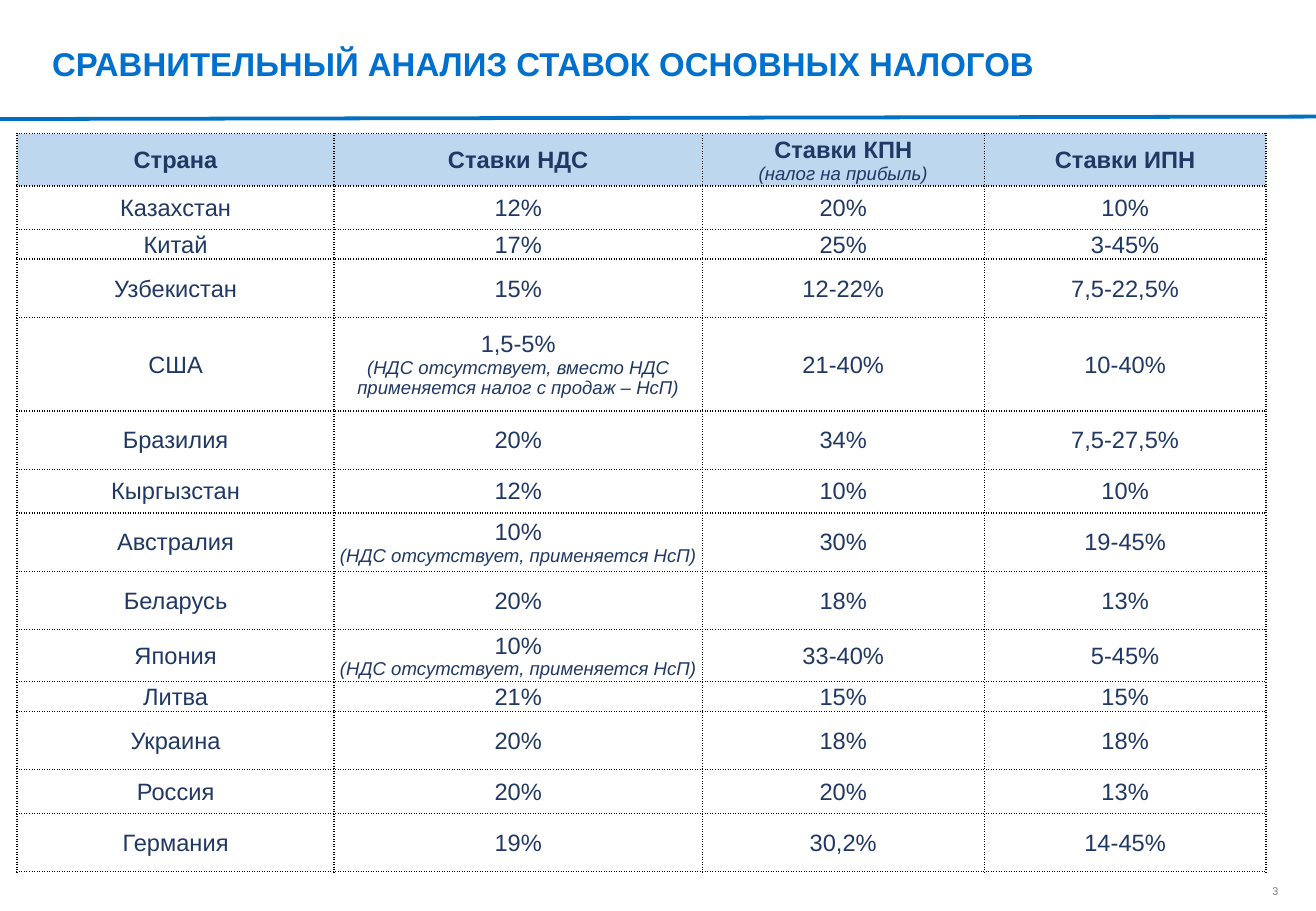
from lxml.etree import SubElement
from pptx import Presentation
from pptx.dml.color import RGBColor
from pptx.enum.shapes import MSO_CONNECTOR
from pptx.enum.text import MSO_ANCHOR, MSO_AUTO_SIZE, PP_ALIGN
from pptx.oxml.ns import qn
from pptx.util import Inches, Pt

COLORS = {"title": "0070CE", "rule": "0070C0", "text": "203864", "header": "BDD7EE",
          "body": "FFFFFF", "border": "000000", "number": "808080"}
WIDTH, HEIGHT = 10.83, 7.5
COLUMNS = [2.61, 3.03, 2.32, 2.32]
TIGHT, SMALL, NOTED, MEDIUM, LARGE = 0.24, 0.36, 0.43, 0.48, 0.77
NO_VAT = "(НДС отсутствует, применяется НсП)"
US_NOTE = "(НДС отсутствует, вместо НДС применяется налог с продаж – НсП)"
ROWS = [
    (NOTED, "Страна", "Ставки НДС", "Ставки КПН\n(налог на прибыль)", "Ставки ИПН"),
    (SMALL, "Казахстан", "12%", "20%", "10%"),
    (TIGHT, "Китай", "17%", "25%", "3-45%"),
    (MEDIUM, "Узбекистан", "15%", "12-22%", "7,5-22,5%"),
    (LARGE, "США", f"1,5-5%\n{US_NOTE}", "21-40%", "10-40%"),
    (MEDIUM, "Бразилия", "20%", "34%", "7,5-27,5%"),
    (SMALL, "Кыргызстан", "12%", "10%", "10%"),
    (MEDIUM, "Австралия", f"10%\n{NO_VAT}", "30%", "19-45%"),
    (MEDIUM, "Беларусь", "20%", "18%", "13%"),
    (NOTED, "Япония", f"10%\n{NO_VAT}", "33-40%", "5-45%"),
    (TIGHT, "Литва", "21%", "15%", "15%"),
    (MEDIUM, "Украина", "20%", "18%", "18%"),
    (SMALL, "Россия", "20%", "20%", "13%"),
    (MEDIUM, "Германия", "19%", "30,2%", "14-45%"),
]


def rgb(name):
    """Return a named colour."""
    return RGBColor.from_string(COLORS[name])


def set_font(p, size, color, name="Arial", bold=False, italic=False):
    """Set the font of a paragraph."""
    f = p.font
    f.name, f.size, f.bold, f.italic = name, Pt(size), bold, italic
    f.color.rgb = rgb(color)


def add_text(s, box, text):
    """Add a middle-anchored text box and return its text frame."""
    tf = s.shapes.add_textbox(*map(Inches, box)).text_frame
    tf.text = text
    tf.vertical_anchor = MSO_ANCHOR.MIDDLE
    return tf


def add_header(s, left, top, width, height):
    """Add the title and the full-width rule below it."""
    tf = add_text(s, (left, top, width, height), "СРАВНИТЕЛЬНЫЙ АНАЛИЗ СТАВОК ОСНОВНЫХ НАЛОГОВ")
    tf.word_wrap = True
    p = tf.paragraphs[0]
    p.line_spacing = 0.9
    set_font(p, 19.5, "title", bold=True)
    rule = s.shapes.add_connector(MSO_CONNECTOR.STRAIGHT, 0, Inches(top + height + 0.24),
                                  Inches(WIDTH), Inches(top + height + 0.22))
    rule.line.color.rgb = rgb("rule")
    rule.line.width = Pt(2.25)
    SubElement(rule._element.spPr, qn("a:effectLst"))


def add_borders(cell):
    """Give a cell dotted borders on all sides."""
    tc_pr = cell._tc.get_or_add_tcPr()
    for side in ("lnL", "lnR", "lnT", "lnB"):
        ln = SubElement(tc_pr, qn(f"a:{side}"), w=str(Pt(1)))
        fill = SubElement(ln, qn("a:solidFill"))
        SubElement(fill, qn("a:srgbClr"), val=COLORS["border"])
        SubElement(ln, qn("a:prstDash"), val="sysDot")


def fill_cell(cell, text, is_header):
    """Write a value and its optional note into a styled cell."""
    add_borders(cell)
    cell.fill.solid()
    cell.fill.fore_color.rgb = rgb("header" if is_header else "body")
    cell.vertical_anchor = MSO_ANCHOR.MIDDLE
    cell.margin_left = cell.margin_right = cell.margin_top = Inches(0.01)
    cell.margin_bottom = 0
    cell.text = text
    for i, p in enumerate(cell.text_frame.paragraphs):
        p.alignment = PP_ALIGN.CENTER
        is_note = i > 0
        set_font(p, 11 if is_note else 14, "text", bold=is_header and not is_note, italic=is_note)


def add_rates(s, left, top):
    """Add the table of tax rates by country."""
    heights = [row[0] for row in ROWS]
    box = (left, top, sum(COLUMNS), sum(heights))
    table = s.shapes.add_table(len(ROWS), len(COLUMNS), *map(Inches, box)).table
    table.first_row = table.horz_banding = False
    for column, width in zip(table.columns, COLUMNS):
        column.width = Inches(width)
    for r, (height, *values) in enumerate(ROWS):
        table.rows[r].height = Inches(height)
        for c, value in enumerate(values):
            fill_cell(table.cell(r, c), value, r == 0)


def add_number(s, left, top, size):
    """Add the slide number."""
    tf = add_text(s, (left, top, size, size), "3")
    tf.margin_left = tf.margin_right = tf.margin_top = tf.margin_bottom = 0
    tf.word_wrap = False
    tf.auto_size = MSO_AUTO_SIZE.SHAPE_TO_FIT_TEXT
    set_font(tf.paragraphs[0], 6.5, "number", name="Roboto")


def main():
    """Build and save the slide."""
    prs = Presentation()
    prs.slide_width, prs.slide_height = Inches(WIDTH), Inches(HEIGHT)
    s = prs.slides.add_slide(prs.slide_layouts[6])
    add_number(s, 10.47, 7.28, 0.11)
    add_header(s, 0.33, 0.34, WIDTH - 0.33, 0.4)
    add_rates(s, 0.14, 1.1)
    prs.save("out.pptx")


if __name__ == "__main__":
    main()
